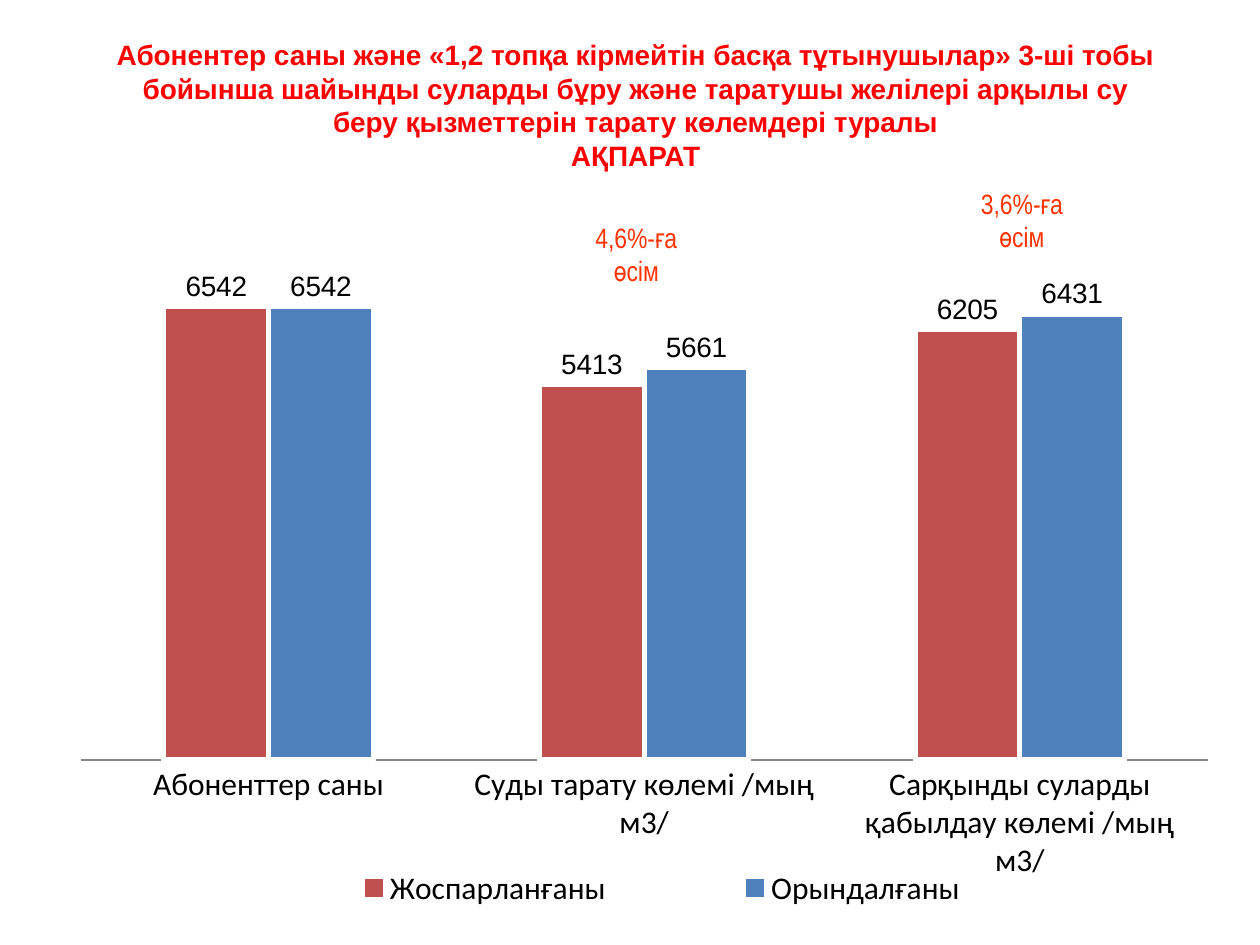
"""Build a slide comparing planned and actual volumes of consumer group 3."""
from dataclasses import dataclass

from lxml.etree import SubElement
from pptx import Presentation
from pptx.chart.data import CategoryChartData
from pptx.dml.color import RGBColor
from pptx.enum.chart import XL_CHART_TYPE, XL_LABEL_POSITION, XL_LEGEND_POSITION, XL_TICK_MARK
from pptx.enum.text import MSO_ANCHOR, MSO_AUTO_SIZE, PP_ALIGN
from pptx.oxml.ns import qn
from pptx.util import Inches, Pt

COLORS = {
    "title": "FF0000",
    "growth": "FF3300",
    "text": "000000",
    "plan": "C0504D",
    "actual": "4F81BD",
    "gap": "FFFFFF",
    "axis": "868686",
}


@dataclass
class Series:
    name: str
    values: tuple[int, ...]
    color: str


@dataclass
class Growth:
    left: float
    top: float
    percent: str


TITLE = (
    "Абонентер саны және «1,2 топқа кірмейтін басқа тұтынушылар» 3-ші тобы "
    "бойынша шайынды суларды бұру және таратушы желілері арқылы су",
    "беру қызметтерін тарату көлемдері туралы",
    "АҚПАРАТ",
)
CATEGORIES = (
    "Абоненттер саны",
    "Суды тарату көлемі /мың м3/",
    "Сарқынды суларды қабылдау көлемі /мың м3/",
)
SERIES = (
    Series("Жоспарланғаны", (6542, 5413, 6205), "plan"),
    Series("Орындалғаны", (6542, 5661, 6431), "actual"),
)
GROWTHS = (Growth(4.54, 1.7, "4,6%-ға"), Growth(7.6, 1.43, "3,6%-ға"))


def rgb(key: str) -> RGBColor:
    return RGBColor.from_string(COLORS[key])


def style_font(font, name: str, size: int, color: str, bold: bool = False) -> None:
    font.name, font.size, font.bold = name, Pt(size), bold
    font.color.rgb = rgb(color)


def write_lines(sp, lines: tuple[str, ...], font: str, color: str, bold: bool = False) -> None:
    tf = sp.text_frame
    tf.word_wrap = True
    tf.auto_size = MSO_AUTO_SIZE.SHAPE_TO_FIT_TEXT
    tf.vertical_anchor = MSO_ANCHOR.TOP
    for i, line in enumerate(lines):
        p = tf.add_paragraph() if i else tf.paragraphs[0]
        p.alignment = PP_ALIGN.CENTER
        r = p.add_run()
        r.text = line
        style_font(r.font, font, 16, color, bold)


def add_title(s) -> None:
    sp = s.shapes.title
    sp.left, sp.top, sp.width, sp.height = map(Inches, (0.43, 0.25, 9.23, 1.18))
    write_lines(sp, TITLE, "Arial", "title", bold=True)


def add_growth(s, growth: Growth) -> None:
    sp = s.shapes.add_textbox(
        Inches(growth.left), Inches(growth.top), Inches(1.02), Inches(0.64))
    write_lines(sp, (growth.percent, "өсім"), "Arial Narrow", "growth")


def set_layout(parent, index: int, box: tuple[float, ...], inner: bool = False) -> None:
    for old in parent.findall(qn("c:layout")):
        parent.remove(old)
    layout = SubElement(parent, qn("c:layout"))
    parent.insert(index, layout)
    manual = SubElement(layout, qn("c:manualLayout"))
    if inner:
        SubElement(manual, qn("c:layoutTarget")).set("val", "inner")
    for tag in ("xMode", "yMode"):
        SubElement(manual, qn(f"c:{tag}")).set("val", "edge")
    for tag, value in zip("xywh", box):
        SubElement(manual, qn(f"c:{tag}")).set("val", str(value))


def style_series(ser, color: str) -> None:
    ser.format.fill.solid()
    ser.format.fill.fore_color.rgb = rgb(color)
    ser.format.line.color.rgb = rgb("gap")
    ser.format.line.width = Pt(3)
    labels = ser.data_labels
    labels.show_value = True
    labels.number_format, labels.number_format_is_linked = "0", False
    labels.position = XL_LABEL_POSITION.OUTSIDE_END
    style_font(labels.font, "Arial", 16, "text")


def add_volume_chart(s) -> None:
    data = CategoryChartData(number_format="0")
    data.categories = CATEGORIES
    for series in SERIES:
        data.add_series(series.name, series.values)
    chart = s.shapes.add_chart(
        XL_CHART_TYPE.COLUMN_CLUSTERED,
        Inches(0.17), Inches(2.02), Inches(9.42), Inches(5.35), data).chart
    style_font(chart.font, "Calibri", 18, "text")
    chart.has_title = False

    plot = chart.plots[0]
    plot.gap_width, plot.overlap, plot.vary_by_categories = 159, 0, False
    for ser, series in zip(plot.series, SERIES):
        style_series(ser, series.color)

    values = chart.value_axis
    values.visible = values.has_major_gridlines = False
    values.minimum_scale, values.maximum_scale = 0, 7000
    cats = chart.category_axis
    cats.major_tick_mark = XL_TICK_MARK.NONE
    cats.format.line.color.rgb = rgb("axis")

    chart.has_legend = True
    legend = chart.legend
    legend.position = XL_LEGEND_POSITION.BOTTOM
    legend.include_in_layout = False
    plot_area = chart.element.find(".//" + qn("c:plotArea"))
    set_layout(plot_area, 0, (0.05, 0.03, 0.95, 0.72), inner=True)
    set_layout(chart.element.find(".//" + qn("c:legend")), 1, (0.18, 0.9, 0.72, 0.08))


def main() -> None:
    prs = Presentation()
    prs.slide_width, prs.slide_height = Inches(10), Inches(7.5)
    s = prs.slides.add_slide(prs.slide_layouts[5])
    add_volume_chart(s)
    add_title(s)
    for growth in GROWTHS:
        add_growth(s, growth)
    prs.save("out.pptx")


if __name__ == "__main__":
    main()
